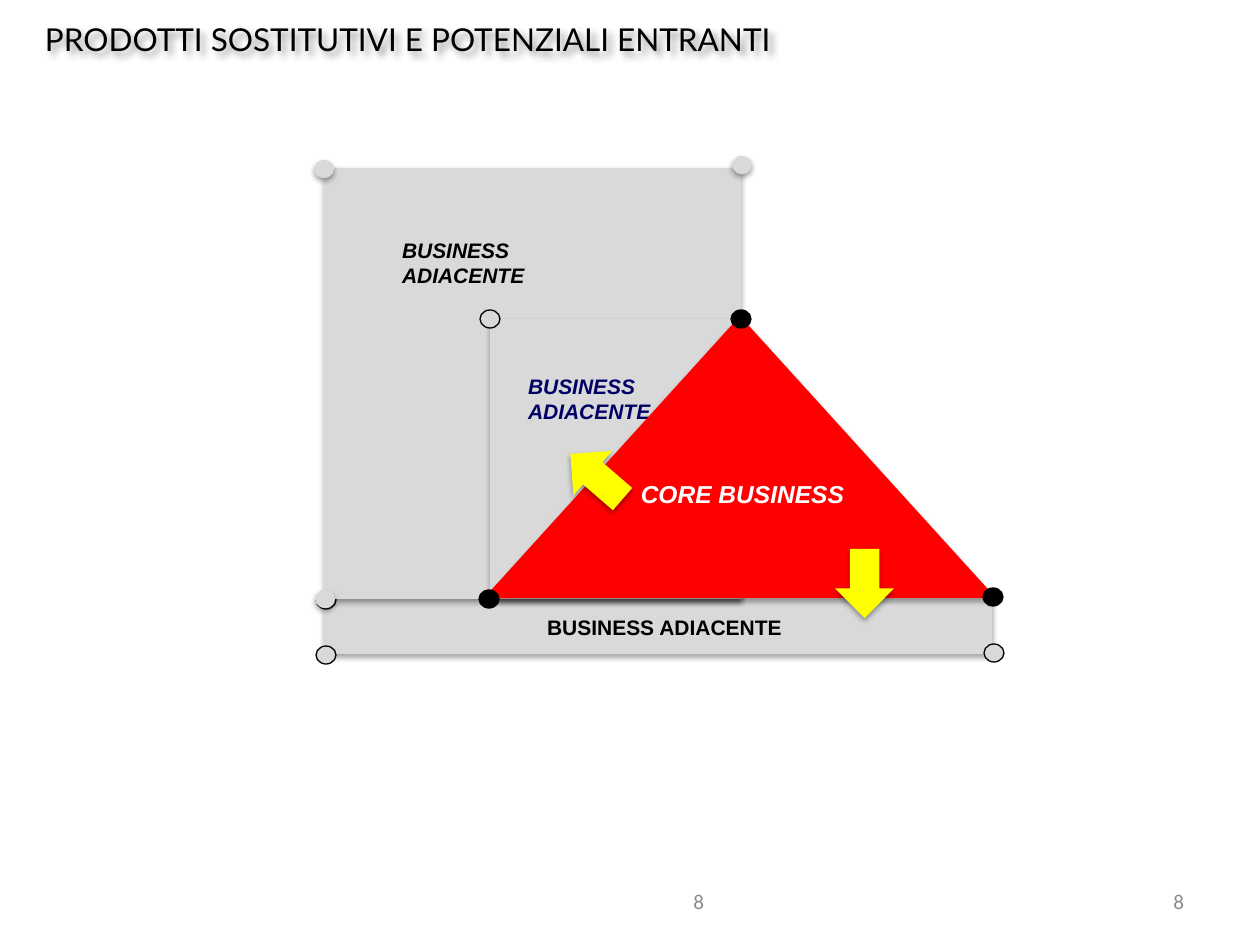
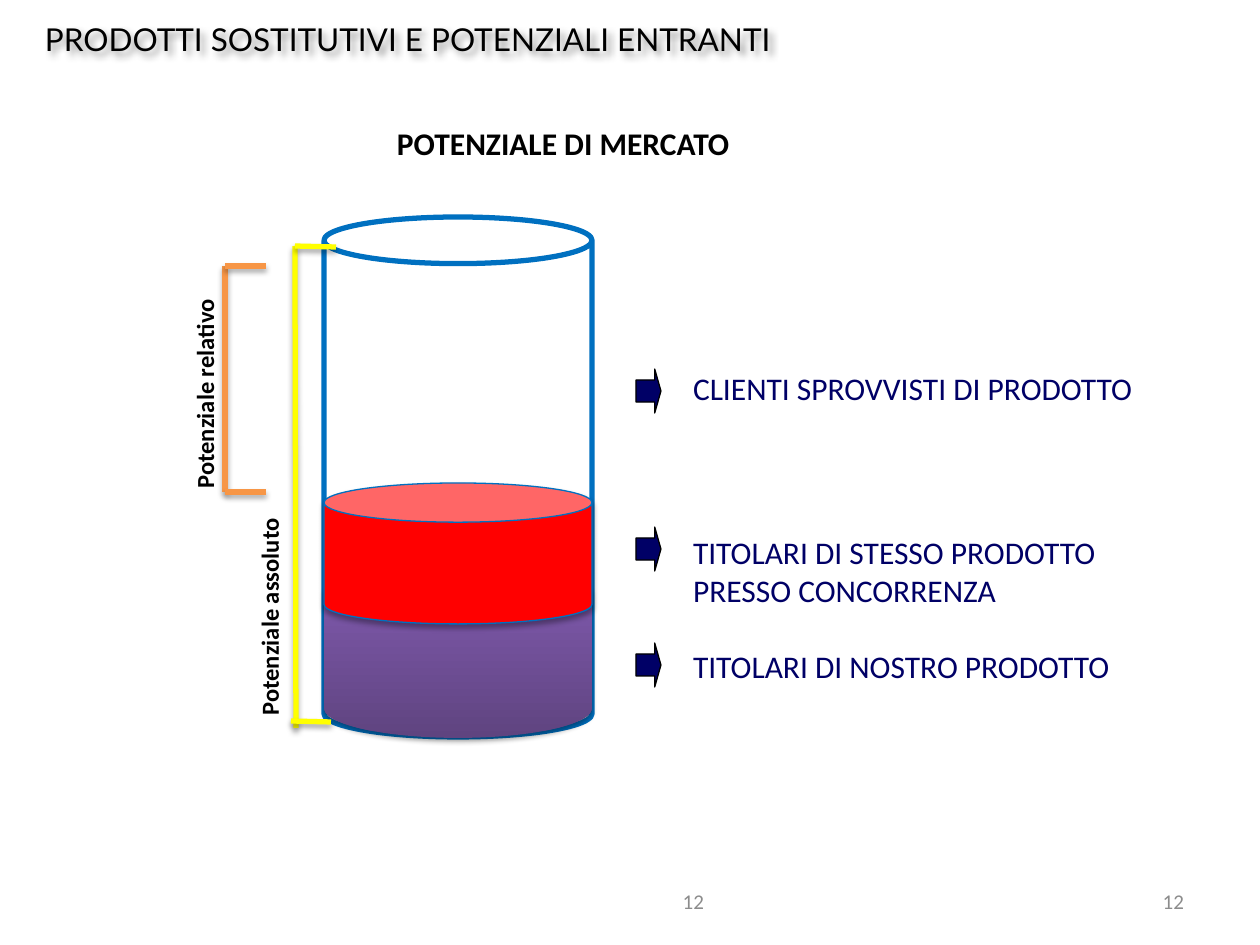
from dataclasses import dataclass

from pptx import Presentation
from pptx import oxml
from pptx import util as u
from pptx.dml.color import RGBColor
from pptx.enum import shapes, text
from pptx.oxml import ns

PX = u.Inches(1) / 126


@dataclass(frozen=True)
class Theme:
    black: str = "000000"
    white: str = "FFFFFF"
    gray: str = "D9D9D9"
    number: str = "8C8C8C"
    navy: str = "000066"
    red: str = "FF0000"
    yellow: str = "FFFF00"
    orange: str = "F79646"
    blue: str = "0070C0"
    purple: tuple = ("5F4480", "7C57A8")
    title_font: str = "Lato"
    body_font: str = "Calibri"
    diagram_font: str = "Arial"
    large: int = 18
    medium: int = 14
    small: int = 12
    thin: float = 0.75
    thick: float = 3
    soft_shadow: tuple = (3.1, 1.8, 90, 35)
    title_shadow: tuple = (4, 3, 45, 43)


T = Theme()
LINE = shapes.MSO_CONNECTOR.STRAIGHT
TITLE = shapes.PP_PLACEHOLDER.TITLE
RECT = shapes.MSO_SHAPE.RECTANGLE
OVAL = shapes.MSO_SHAPE.OVAL
TRIANGLE = shapes.MSO_SHAPE.ISOSCELES_TRIANGLE
ARROW = shapes.MSO_SHAPE.RIGHT_ARROW
CAN = shapes.MSO_SHAPE.CAN
LEFT, CENTER, RIGHT = text.PP_ALIGN.LEFT, text.PP_ALIGN.CENTER, text.PP_ALIGN.RIGHT
TOP, MIDDLE = text.MSO_ANCHOR.TOP, text.MSO_ANCHOR.MIDDLE


def draw(slide, kind, box, fill=None, line=None, width=T.thin, shadow=None,
         rotation=0, adjustments=()):
    lengths = [round(value * PX) for value in box]
    if kind is LINE:
        item = slide.shapes.add_connector(kind, *lengths)
    elif kind is TITLE:
        item = slide.shapes.title
        item.left, item.top, item.width, item.height = lengths
    elif kind is None:
        item = slide.shapes.add_textbox(*lengths)
    else:
        item = slide.shapes.add_shape(kind, *lengths)
        for index, value in enumerate(adjustments):
            item.adjustments[index] = value

    if kind is not LINE:
        item.rotation = rotation
        if fill is None:
            item.fill.background()
        elif isinstance(fill, tuple):
            item.fill.gradient()
            item.fill.gradient_angle = 90
            stops = item.fill.gradient_stops
            for stop, color, position in zip(stops, fill, (0, 0.8)):
                stop.color.rgb = RGBColor.from_string(color)
                stop.position = position
        else:
            item.fill.solid()
            item.fill.fore_color.rgb = RGBColor.from_string(fill)

    if line:
        item.line.color.rgb = RGBColor.from_string(line)
        item.line.width = u.Pt(width)
    else:
        item.line.fill.background()

    effect = ""
    if shadow:
        blur, distance, angle, alpha = shadow
        effect = (
            f'<a:outerShdw blurRad="{u.Pt(blur)}" dist="{u.Pt(distance)}" '
            f'dir="{angle * 60000}" rotWithShape="0"><a:srgbClr val="{T.black}">'
            f'<a:alpha val="{alpha * 1000}"/></a:srgbClr></a:outerShdw>'
        )
    item._element.spPr.append(oxml.parse_xml(
        f'<a:effectLst {ns.nsdecls("a")}>{effect}</a:effectLst>'))
    return item


def write(item, words, size=T.large, color=T.black, font=T.body_font, bold=False,
          italic=False, align=LEFT, anchor=TOP, insets=(0, 0, 0, 0)):
    frame = item.text_frame
    frame.word_wrap = True
    frame.auto_size = text.MSO_AUTO_SIZE.NONE
    frame.vertical_anchor = anchor
    (frame.margin_left, frame.margin_top,
     frame.margin_right, frame.margin_bottom) = [round(value * PX) for value in insets]
    frame.text = words
    for paragraph in frame.paragraphs:
        paragraph.alignment = align
        style = paragraph.runs[0].font
        style.size = u.Pt(size)
        style.name = font
        style.bold = bold
        style.italic = italic
        style.color.rgb = RGBColor.from_string(color)


deck = Presentation()
deck.slide_width, deck.slide_height = round(1260 * PX), round(945 * PX)
pages = []
for number in ("8", "12"):
    page = deck.slides.add_slide(deck.slide_layouts[5])
    heading = draw(page, TITLE, (0, 0, 1260, 78), shadow=T.title_shadow)
    write(heading, "PRODOTTI SOSTITUTIVI E POTENZIALI ENTRANTI",
          font=T.title_font, anchor=MIDDLE, insets=(45, 6, 13, 6))
    for left in (903, 423):
        write(draw(page, None, (left, 876, 294, 50)), number, size=T.small,
              color=T.number, align=RIGHT, anchor=MIDDLE, insets=(13, 6, 13, 6))
    pages.append(page)
business, market = pages

outlined = dict(line=T.black)
shaded = dict(shadow=T.soft_shadow)
adjacent = "BUSINESS ADIACENTE"
zones = [
    (RECT, (324, 599, 668, 55), T.gray, [(316, 646), (984, 644), (316, 591)],
     T.gray, outlined, adjacent, (498, 615, 333, 25), T.gray,
     dict(size=T.small, align=CENTER)),
    (RECT, (324, 168, 417, 431), T.gray, [(732, 156), (314, 160), (315, 590)],
     T.gray, shaded, adjacent, (353, 238, 223, 50), T.gray,
     dict(size=T.small, italic=True, insets=(49, 0, 0, 0))),
    (RECT, (490, 319, 252, 280), T.gray, [(480, 310)],
     T.gray, outlined, adjacent, (493, 374, 194, 50), T.gray,
     dict(size=T.small, italic=True, color=T.navy, insets=(35, 0, 0, 0))),
    (TRIANGLE, (484, 316, 512, 282), T.red, [(983, 588), (731, 310), (479, 590)],
     T.black, outlined, "CORE BUSINESS", (633, 479, 219, 30), None,
     dict(size=T.medium, italic=True, color=T.white, align=CENTER)),
]
for kind, area, fill, corners, dot_fill, dot_style, name, name_box, name_fill, style in zones:
    draw(business, kind, area, fill, shadow=T.soft_shadow)
    for left, top in corners:
        draw(business, OVAL, (left, top, 20, 18), dot_fill, **dot_style)
    label = draw(business, RECT if name_fill else None, name_box, name_fill)
    write(label, name, font=T.diagram_font, bold=True, anchor=MIDDLE, **style)

for left, top, rotation in ((562, 447, 220.9), (830, 554, 90)):
    draw(business, ARROW, (left, top, 69, 59), T.yellow,
         shadow=T.soft_shadow, rotation=rotation)

write(draw(market, None, (384, 118, 435, 50)), "POTENZIALE DI MERCATO",
      bold=True, insets=(13, 6, 13, 6))

layers = [
    (217, 520, 0.174, T.white, dict(line=T.blue, width=T.thick)),
    (563, 175, 0.345, T.purple, shaded),
    (483, 141, 0.278, T.red, dict(line=T.blue, shadow=T.soft_shadow)),
]
for top, height, cap, fill, style in layers:
    draw(market, CAN, (324, top, 268, height), fill, adjustments=(cap,), **style)

customers = [
    (369, 369, "CLIENTI SPROVVISTI DI PRODOTTO"),
    (527, 533, "TITOLARI DI STESSO PRODOTTO\nPRESSO CONCORRENZA"),
    (643, 647, "TITOLARI DI NOSTRO PRODOTTO"),
]
for arrow_top, text_top, words in customers:
    draw(market, ARROW, (636, arrow_top, 25, 44), T.navy, line=T.black,
         adjustments=(0.5, 0.25))
    write(draw(market, None, (693, text_top, 508, 38 * len(words.splitlines()))),
          words, color=T.navy)

brackets = [
    (T.orange, [(225, 266, 225, 492), (225, 266, 266, 266), (225, 492, 266, 492)],
     "Potenziale relativo", (-26, 249)),
    (T.yellow, [(295, 246, 296, 728), (295, 246, 336, 247), (291, 721, 331, 722)],
     "Potenziale assoluto", (39, 476)),
]
for color, strokes, name, (left, top) in brackets:
    for ends in strokes:
        draw(market, LINE, ends, line=color, width=T.thick, shadow=T.soft_shadow)
    write(draw(market, None, (left, top, 462, 43), rotation=270), name,
          size=T.medium, bold=True, insets=(13, 6, 13, 6))

deck.save("out.pptx")
